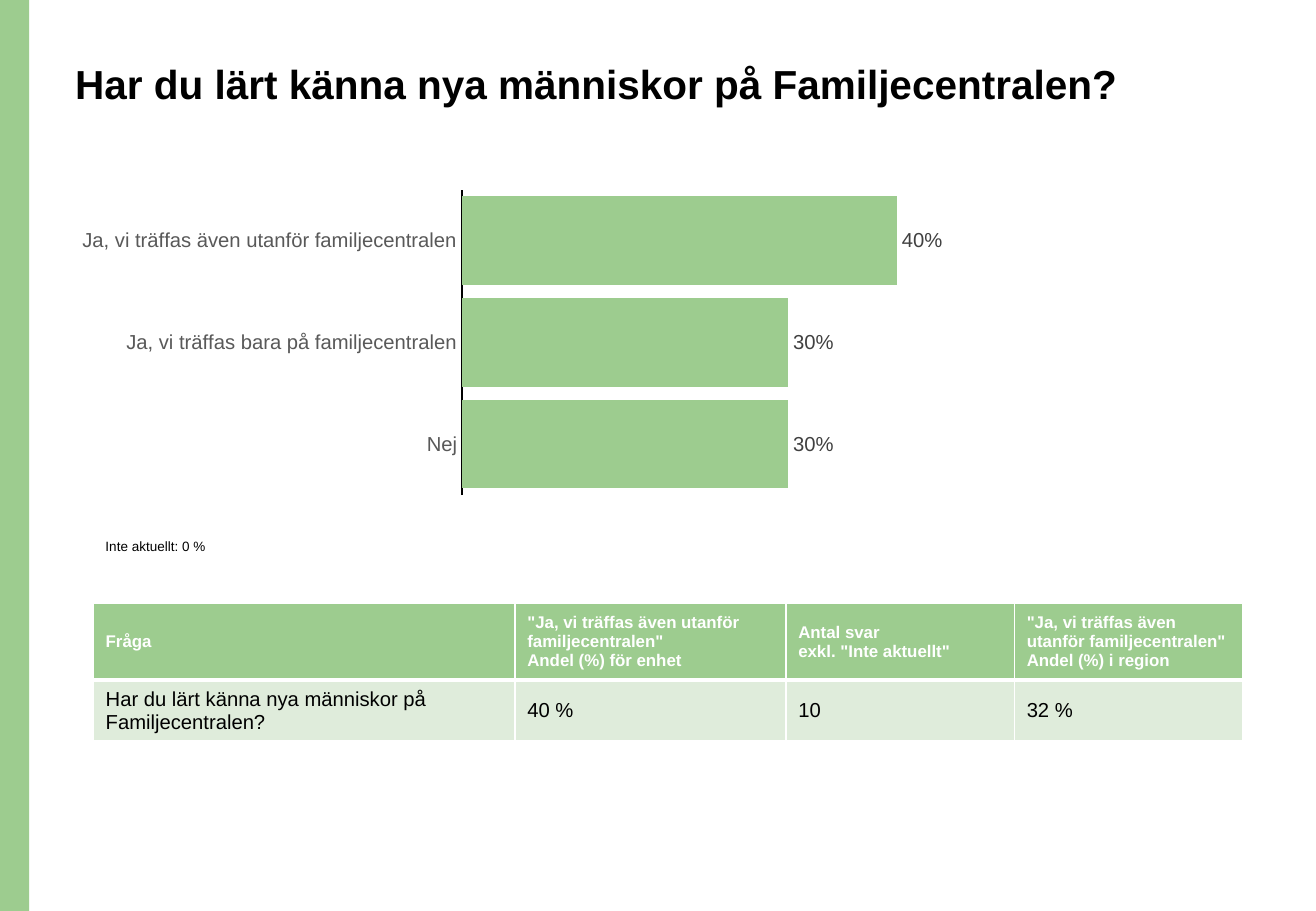
from lxml.etree import SubElement
from pptx import Presentation
from pptx.chart.data import CategoryChartData
from pptx.dml.color import RGBColor
from pptx.enum.chart import XL_CHART_TYPE, XL_LABEL_POSITION, XL_TICK_MARK
from pptx.enum.shapes import MSO_SHAPE
from pptx.enum.text import MSO_ANCHOR
from pptx.oxml import parse_xml
from pptx.oxml.ns import nsdecls, qn
from pptx.util import Pt

PX = 9144
GREEN, PALE, WHITE, BLACK = "9DCC8F", "DFECDB", "FFFFFF", "000000"
QUESTION = "Har du lärt känna nya människor på Familjecentralen?"
ANSWERS = {
    "Ja, vi träffas även utanför familjecentralen": 0.4,
    "Ja, vi träffas bara på familjecentralen": 0.3,
    "Nej": 0.3,
}
ROWS = [
    [
        "Fråga",
        '"Ja, vi träffas även utanför familjecentralen"\nAndel (%) för enhet',
        'Antal svar\nexkl. "Inte aktuellt"',
        '"Ja, vi träffas även utanför familjecentralen"\nAndel (%) i region',
    ],
    [QUESTION, "40 %", "10", "32 %"],
]


def px(*lengths):
    return [n * PX for n in lengths]


def rgb(color):
    return RGBColor.from_string(color)


def set_font(font, size, color, bold=False):
    font.name = "Arial"
    font.size = Pt(size)
    font.bold = bold
    font.color.rgb = rgb(color)


def add_side_bar(s, box):
    sp = s.shapes.add_shape(MSO_SHAPE.RECTANGLE, *px(*box))
    sp.shadow.inherit = False
    sp.fill.solid()
    sp.fill.fore_color.rgb = rgb(GREEN)
    sp.line.fill.background()


def add_text(s, box, text, size, spacing, bold=False):
    tf = s.shapes.add_textbox(*px(*box)).text_frame
    tf.word_wrap = True
    p = tf.paragraphs[0]
    p.text = text
    p.line_spacing = spacing
    set_font(p.runs[0].font, size, BLACK, bold)


def set_plot_area(chart, **fractions):
    area = chart._chartSpace.chart.plotArea
    for old in area.findall(qn("c:layout")):
        area.remove(old)
    layout = parse_xml(f"<c:layout {nsdecls('c')}/>")
    manual = SubElement(layout, qn("c:manualLayout"))
    settings = {"layoutTarget": "inner", "xMode": "edge", "yMode": "edge", **fractions}
    for tag, value in settings.items():
        SubElement(manual, qn(f"c:{tag}")).set("val", str(value))
    area.insert(0, layout)


def add_answer_chart(s, box):
    data = CategoryChartData(number_format="0%")
    data.categories = list(ANSWERS)
    data.add_series("Series 1", list(ANSWERS.values()))
    chart = s.shapes.add_chart(XL_CHART_TYPE.BAR_CLUSTERED, *px(*box), data).chart
    chart.has_legend = False
    chart.has_title = False
    set_font(chart.font, 10, BLACK)
    set_plot_area(chart, x=0.44, y=0.02, w=0.54, h=0.96)

    axis = chart.category_axis
    axis.reverse_order = True
    axis.major_tick_mark = axis.minor_tick_mark = XL_TICK_MARK.NONE
    axis.format.line.color.rgb = rgb(BLACK)
    axis.format.line.width = Pt(0.75)
    set_font(axis.tick_labels.font, 12, "595959")

    values = chart.value_axis
    values.visible = False
    values.has_major_gridlines = False
    values.minimum_scale, values.maximum_scale = 0, 0.45

    plot = chart.plots[0]
    plot.gap_width = 15
    plot.vary_by_categories = False
    bars = plot.series[0]
    bars.format.fill.solid()
    bars.format.fill.fore_color.rgb = rgb(GREEN)
    labels = bars.data_labels
    labels.show_value = True
    labels.position = XL_LABEL_POSITION.OUTSIDE_END
    labels.number_format = "0%"
    labels.number_format_is_linked = False
    set_font(labels.font, 12, "404040")


def set_borders(cell, **widths):
    tcPr = cell._tc.get_or_add_tcPr()
    for side in "LRTB":
        ln = SubElement(tcPr, qn(f"a:ln{side}"), w=str(Pt(widths.get(side, 1))))
        fill = SubElement(ln, qn("a:solidFill"))
        SubElement(fill, qn("a:srgbClr"), val=WHITE)


def add_result_table(s, box):
    table = s.shapes.add_table(len(ROWS), len(ROWS[0]), *px(*box)).table
    for column, width in zip(table.columns, px(347, 223, 188, 188)):
        column.width = width
    for row, height in zip(table.rows, px(63, 46)):
        row.height = height
    styles = [(GREEN, 10, WHITE, True, {"B": 3}), (PALE, 12, BLACK, False, {"T": 3})]
    for row, texts, style in zip(table.rows, ROWS, styles):
        fill, size, color, bold, borders = style
        for cell, text in zip(row.cells, texts):
            set_borders(cell, **borders)
            cell.fill.solid()
            cell.fill.fore_color.rgb = rgb(fill)
            cell.vertical_anchor = MSO_ANCHOR.MIDDLE
            cell.text_frame.text = text
            for p in cell.text_frame.paragraphs:
                set_font(p.runs[0].font, size, color, bold)


def main():
    prs = Presentation()
    prs.slide_width, prs.slide_height = px(1083, 750)
    s = prs.slides.add_slide(prs.slide_layouts[6])
    add_side_bar(s, (0, 0, 24, 750))
    add_text(s, (52, 48, 934, 102), QUESTION, 24, 0.9, bold=True)
    add_result_table(s, (77, 497, 946, 109))
    add_text(s, (77, 431, 210, 28), "Inte aktuellt: 0 %", 8, 1.5)
    add_answer_chart(s, (52, 151, 746, 262))
    prs.save("out.pptx")


if __name__ == "__main__":
    main()
